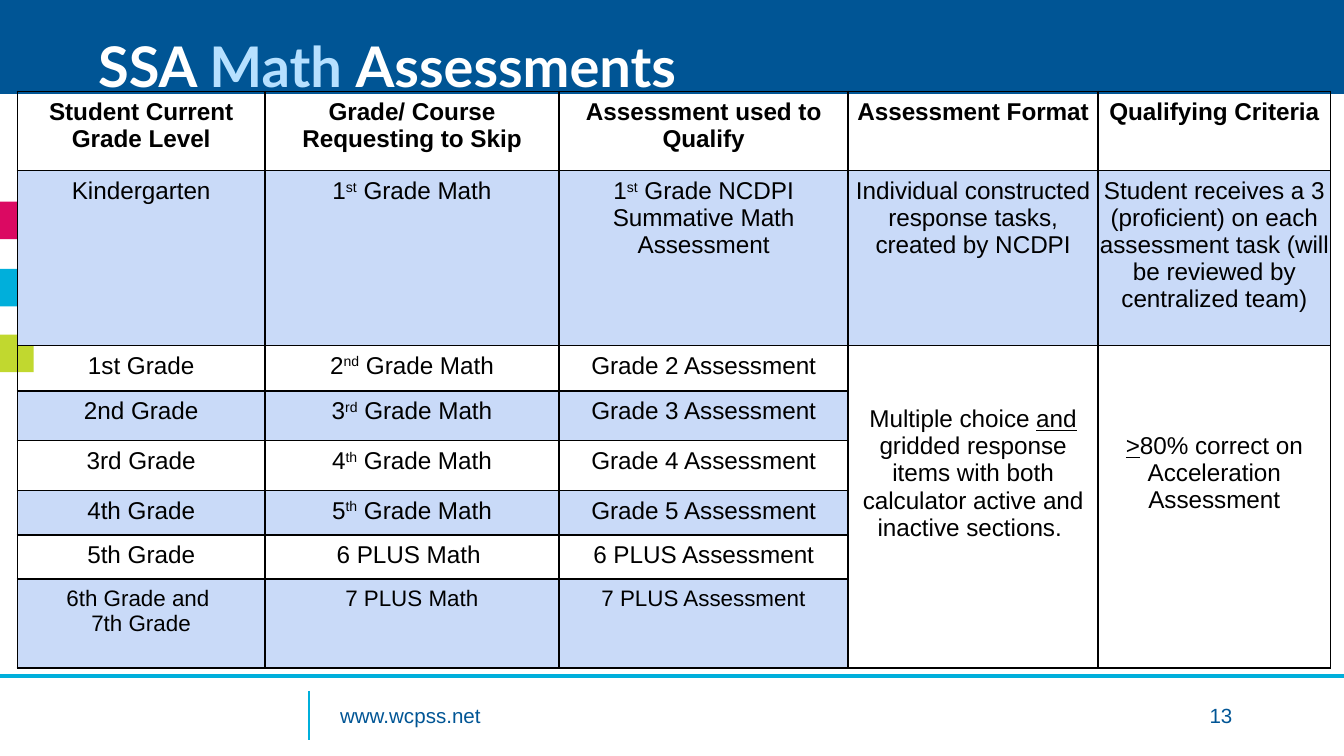
"""Builds the SSA Math Assessments slide."""
from dataclasses import dataclass

from lxml import etree
from pptx import Presentation
from pptx import util as u
from pptx.dml.color import RGBColor
from pptx.enum import shapes, text
from pptx.oxml.ns import qn

COLORS = {
    "navy": "005595", "cyan": "00AFDB", "pink": "DB0962", "lime": "C1D82F",
    "sky": "B6E0FF", "band": "C9DAF8", "white": "FFFFFF", "black": "000000",
}


@dataclass(frozen=True)
class Piece:
    text: str
    raised: bool = False
    underlined: bool = False
    color: str = "black"


@dataclass(frozen=True)
class Block:
    left: float
    top: float
    width: float
    height: float
    color: str


@dataclass(frozen=True)
class Rule:
    start: tuple[float, float]
    end: tuple[float, float]
    width: float


@dataclass(frozen=True)
class MergedCell:
    column: int
    pieces: tuple[Piece, ...]
    margin_top: float


def ordinal(number: str, suffix: str, rest: str) -> tuple[Piece, ...]:
    """Return the pieces of a phrase that starts with a raised ordinal."""
    return Piece(number), Piece(suffix, raised=True), Piece(rest)


BLOCKS = [Block(0, top, 0.25, 0.28, color)
          for top, color in ((1.5, "pink"), (2, "cyan"), (2.49, "lime"))]
BLOCKS.append(Block(0, 0, 10, 0.7, "navy"))
RULES = [Rule((0, 5.03), (10, 5.03), 2), Rule((2.3, 5.14), (2.3, 5.51), 0.75)]
TITLE = (Piece("SSA ", color="white"), Piece("Math ", color="sky"),
         Piece("Assessments", color="white"))

COLUMN_WIDTHS = [1.84, 2.19, 2.15, 1.86, 1.73]
ROW_HEIGHTS = [0.59, 1.3, 0.34, 0.37, 0.37, 0.33, 0.33, 0.66]
ROWS = [
    ("Student Current Grade Level", "Grade/ Course Requesting to Skip",
     "Assessment used to Qualify", "Assessment Format", "Qualifying Criteria"),
    ("Kindergarten", ordinal("1", "st", " Grade Math"),
     ordinal("1", "st", " Grade NCDPI Summative Math Assessment"),
     "Individual constructed response tasks, created by NCDPI",
     "Student receives a 3 (proficient) on each assessment task "
     "(will be reviewed by centralized team)"),
    *((f"{current} Grade", ordinal(str(number), suffix, " Grade Math"),
       f"Grade {number} Assessment")
      for current, number, suffix in (("1st", 2, "nd"), ("2nd", 3, "rd"),
                                      ("3rd", 4, "th"), ("4th", 5, "th"))),
    ("5th Grade", "6 PLUS Math ", "6 PLUS Assessment"),
    ("6th Grade and \n7th Grade", "7 PLUS Math", "7 PLUS Assessment"),
]
FIRST_MERGED_ROW = 2
MERGED_CELLS = [
    MergedCell(3, (Piece("Multiple choice "), Piece("and ", underlined=True),
                   Piece("gridded response items with both calculator active "
                         "and inactive sections. ")), 0.45),
    MergedCell(4, (Piece(">", underlined=True),
                   Piece("80% correct on Acceleration Assessment")), 0.65),
]


def rgb(name: str) -> RGBColor:
    """Return a palette colour."""
    return RGBColor.from_string(COLORS[name])


def set_font(font, name: str, size: float, color: str, bold: bool = False) -> None:
    """Format a font."""
    font.name, font.size, font.bold = name, u.Pt(size), bold
    font.color.rgb = rgb(color)


def set_margins(frame, left: float, top: float) -> None:
    """Give a text frame or a cell symmetric margins."""
    frame.margin_left = frame.margin_right = u.Inches(left)
    frame.margin_top = frame.margin_bottom = u.Inches(top)


def add_pieces(paragraph, pieces: tuple[Piece, ...], name: str, size: float,
               bold: bool) -> None:
    """Add formatted runs to a paragraph."""
    for piece in pieces:
        run = paragraph.add_run()
        run.text = piece.text
        set_font(run.font, name, size, piece.color, bold)
        if piece.underlined:
            run.font.underline = True
        if piece.raised:
            run._r.get_or_add_rPr().set("baseline", "30000")


def add_block(slide, block: Block) -> None:
    """Draw a filled rectangle."""
    shape = slide.shapes.add_shape(
        shapes.MSO_SHAPE.RECTANGLE, u.Inches(block.left), u.Inches(block.top),
        u.Inches(block.width), u.Inches(block.height))
    shape.shadow.inherit = False
    shape.fill.solid()
    shape.fill.fore_color.rgb = rgb(block.color)
    shape.line.fill.background()


def add_rule(slide, rule: Rule) -> None:
    """Draw a straight line."""
    points = [u.Inches(value) for value in (*rule.start, *rule.end)]
    connector = slide.shapes.add_connector(shapes.MSO_CONNECTOR.STRAIGHT, *points)
    connector.line.color.rgb = rgb("cyan")
    connector.line.width = u.Pt(rule.width)
    etree.SubElement(connector._element.spPr, qn("a:effectLst"))


def add_footer(slide) -> None:
    """Write the web address and the page number on one tabbed line."""
    box = slide.shapes.add_textbox(
        u.Inches(2.49), u.Inches(5.21), u.Inches(6.83), u.Inches(0.21))
    frame = box.text_frame
    frame.word_wrap = True
    set_margins(frame, 0.04, 0.02)
    paragraph = frame.paragraphs[0]
    paragraph.text = "www.wcpss.net\t13"
    tabs = etree.SubElement(paragraph._p.get_or_add_pPr(), qn("a:tabLst"))
    etree.SubElement(tabs, qn("a:tab"), pos=str(u.Inches(6.64)), algn="r")
    for run in paragraph.runs:
        set_font(run.font, "Arial", 11, "navy")


def format_title(slide) -> None:
    """Place the title over the banner and fill it."""
    title = slide.shapes.title
    slide.shapes._spTree.append(title._element)
    title.left, title.top = u.Inches(0.69), u.Inches(0.12)
    title.width, title.height = u.Inches(8.62), u.Inches(0.8)
    frame = title.text_frame
    frame.auto_size = text.MSO_AUTO_SIZE.NONE
    frame.vertical_anchor = text.MSO_ANCHOR.MIDDLE
    set_margins(frame, 0.04, 0.02)
    paragraph = frame.paragraphs[0]
    paragraph.alignment = text.PP_ALIGN.LEFT
    paragraph.line_spacing = 0.9
    add_pieces(paragraph, TITLE, "Lato", 30, True)


def style_cell(cell, banded: bool) -> None:
    """Set the margins, borders and fill of a cell."""
    set_margins(cell, 0, 0.05)
    properties = cell._tc.get_or_add_tcPr()
    for side in ("lnL", "lnR", "lnT", "lnB"):
        line = etree.SubElement(properties, qn(f"a:{side}"), w=str(u.Pt(1)))
        fill = etree.SubElement(line, qn("a:solidFill"))
        etree.SubElement(fill, qn("a:srgbClr"), val=COLORS["black"])
    if banded:
        cell.fill.solid()
        cell.fill.fore_color.rgb = rgb("band")
    else:
        cell.fill.background()


def write_cell(cell, content: str | tuple[Piece, ...], size: float = 13,
               bold: bool = False) -> None:
    """Write centred text into a cell."""
    if isinstance(content, str):
        cell.text_frame.text = content
    else:
        add_pieces(cell.text_frame.paragraphs[0], content, "Arial", size, bold)
    for paragraph in cell.text_frame.paragraphs:
        paragraph.alignment = text.PP_ALIGN.CENTER
        if isinstance(content, str):
            for run in paragraph.runs:
                set_font(run.font, "Arial", size, "black", bold)


def add_assessment_table(slide) -> None:
    """Draw the table of assessments by grade."""
    table = slide.shapes.add_table(
        len(ROW_HEIGHTS), len(COLUMN_WIDTHS), u.Inches(0.13), u.Inches(0.68),
        u.Inches(sum(COLUMN_WIDTHS)), u.Inches(sum(ROW_HEIGHTS))).table
    table.first_row = table.horz_banding = False
    for column, width in zip(table.columns, COLUMN_WIDTHS):
        column.width = u.Inches(width)
    last_row = len(ROWS) - 1
    for index, (row, height, contents) in enumerate(zip(table.rows, ROW_HEIGHTS, ROWS)):
        row.height = u.Inches(height)
        for position, cell in enumerate(row.cells):
            style_cell(cell, index % 2 == 1 and position < len(contents))
        for cell, content in zip(row.cells, contents):
            write_cell(cell, content, 12 if index == last_row else 13, index == 0)
    for merged in MERGED_CELLS:
        cell = table.cell(FIRST_MERGED_ROW, merged.column)
        cell.merge(table.cell(last_row, merged.column))
        cell.margin_top = u.Inches(merged.margin_top)
        write_cell(cell, merged.pieces)


def main() -> None:
    """Build and save the presentation."""
    presentation = Presentation()
    presentation.slide_width = u.Inches(10)
    presentation.slide_height = presentation.slide_width * 9 // 16
    slide = presentation.slides.add_slide(presentation.slide_layouts[5])
    for rule in RULES:
        add_rule(slide, rule)
    for block in BLOCKS:
        add_block(slide, block)
    add_footer(slide)
    format_title(slide)
    add_assessment_table(slide)
    presentation.save("out.pptx")


if __name__ == "__main__":
    main()
